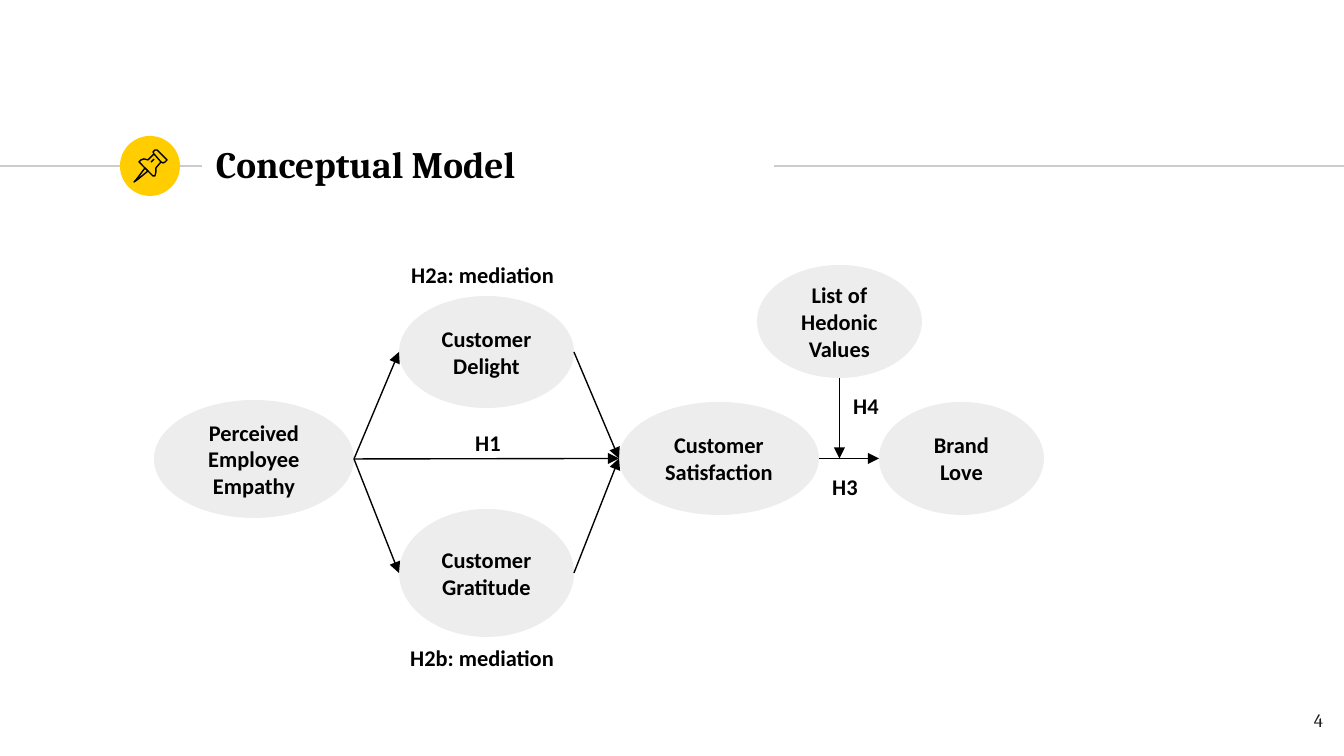
from lxml.etree import SubElement
from pptx import Presentation
from pptx.dml.color import RGBColor
from pptx.enum.shapes import MSO_CONNECTOR, MSO_SHAPE
from pptx.enum.text import MSO_ANCHOR, PP_ALIGN
from pptx.oxml.ns import qn
from pptx.util import Pt

PX = 914400 / 134.4
INSET = 13
BOLD = {"name": "Calibri", "size": Pt(12), "bold": True}
HEAD = {"name": "Cambria", "size": Pt(20), "bold": True}
PAGE = {"name": "Cambria", "size": Pt(10), "bold": False}


def write(shape, text, look, hue="000000", align=PP_ALIGN.LEFT, **frame):
    """Put one styled paragraph in a shape; frame holds text frame values."""
    box = shape.text_frame
    for name, value in frame.items():
        setattr(box, name, value)
    line = box.paragraphs[0]
    line.text = text
    line.alignment = align
    font = line.runs[0].font
    for name, value in look.items():
        setattr(font, name, value)
    font.color.rgb = RGBColor.from_string(hue)


def link(start, end, hue="000000", arrow=True):
    """Draw a thin straight line between two points in px."""
    line = slide.shapes.add_connector(
        MSO_CONNECTOR.STRAIGHT, *[round(n * PX) for n in (*start, *end)])
    line.line.width = Pt(0.75)
    line.line.color.rgb = RGBColor.from_string(hue)
    SubElement(line._element.spPr, qn("a:effectLst"))
    if arrow:
        SubElement(line.line._get_or_add_ln(), qn("a:tailEnd"), type="triangle")


deck = Presentation()
deck.slide_width, deck.slide_height = round(1344 * PX), round(756 * PX)
slide = deck.slides.add_slide(deck.slide_layouts[6])
shapes = slide.shapes
pad = round(INSET * PX)
inner = {"margin_left": pad, "margin_right": pad, "margin_top": pad,
         "margin_bottom": pad, "word_wrap": True}

# Title band
for left, right in [(0, 202), (774, 1344)]:
    link((left, 166), (right, 166), "CCCCCC", arrow=False)
badge = shapes.add_shape(
    MSO_SHAPE.OVAL, *[round(n * PX) for n in (120, 136, 60, 60)])
badge.shadow.inherit = False
badge.fill.solid()
badge.fill.fore_color.rgb = RGBColor.from_string("FFCD00")
badge.line.fill.background()

title = shapes.add_textbox(*[round(n * PX) for n in (203, 132, 570, 64)])
write(title, "Conceptual Model", HEAD,
      vertical_anchor=MSO_ANCHOR.MIDDLE, **inner)
page = shapes.add_textbox(*[round(n * PX) for n in (1255, 698, 81, 58)])
write(page, "4", PAGE, "1D1D1B", PP_ALIGN.RIGHT, **inner)

# Pushpin: needle, cap, body, glint
pin = shapes.add_group_shape()
strokes = [
    ([(145, 168), (136, 180), (134, 182), (137, 180), (148, 171)], True),
    ([(154, 154), (161, 162), (163, 163), (165, 162), (167, 160), (166, 159),
      (157, 150), (155, 150), (153, 152)], True),
    ([(154, 154), (148, 160), (144, 159), (141, 160), (139, 162), (153, 176),
      (155, 176), (156, 172), (156, 168), (161, 162)], False),
    ([(151, 162), (154, 159)], False),
]
for points, closed in strokes:
    pen = pin.shapes.build_freeform(*points[0], scale=PX)
    pen.add_line_segments(points[1:], close=closed)
    part = pen.convert_to_shape()
    part.shadow.inherit = False
    part.fill.background()
    part.line.width = Pt(0.75)
    part.line.color.rgb = RGBColor.from_string("000000")

# Concepts: left, top, width, height
nodes = {
    "Perceived Employee Empathy": (154, 400, 200, 118),
    "Customer Delight": (399, 296, 175, 112),
    "Customer Gratitude": (399, 509, 175, 128),
    "Customer Satisfaction": (619, 402, 200, 113),
    "Brand Love": (879, 402, 165, 113),
    "List of Hedonic Values": (757, 265, 165, 113),
}
west, east = {}, {}
for text, (left, top, width, height) in nodes.items():
    node = shapes.add_shape(
        MSO_SHAPE.OVAL, *[round(n * PX) for n in (left, top, width, height)])
    node.shadow.inherit = False
    node.fill.solid()
    node.fill.fore_color.rgb = RGBColor.from_string("000000")
    tint = node._element.spPr.find(".//" + qn("a:srgbClr"))
    SubElement(tint, qn("a:alpha"), val="7000")
    node.line.fill.background()
    write(node, text, BOLD, align=PP_ALIGN.CENTER,
          vertical_anchor=MSO_ANCHOR.MIDDLE, **inner)
    west[text] = (left, top + height / 2)
    east[text] = (left + width, top + height / 2)

cause, joy, thanks, content, love, values = nodes
for start, end in [(cause, joy), (cause, thanks), (cause, content),
                   (joy, content), (thanks, content), (content, love)]:
    link(east[start], west[end])

# The moderator points down at the path to love
left, top, width, height = nodes[values]
link((left + width / 2, top + height), (left + width / 2, west[love][1]))

# Hypotheses
for text, left, top, width in [
    ("H2a: mediation", 398, 255, 176),
    ("H2b: mediation", 397, 638, 177),
    ("H1", 462, 423, 52),
    ("H3", 819, 467, 52),
    ("H4", 840, 386, 52),
]:
    label = shapes.add_textbox(*[round(n * PX) for n in (left, top, width, 41)])
    write(label, text, BOLD, word_wrap=False)

deck.save("out.pptx")
